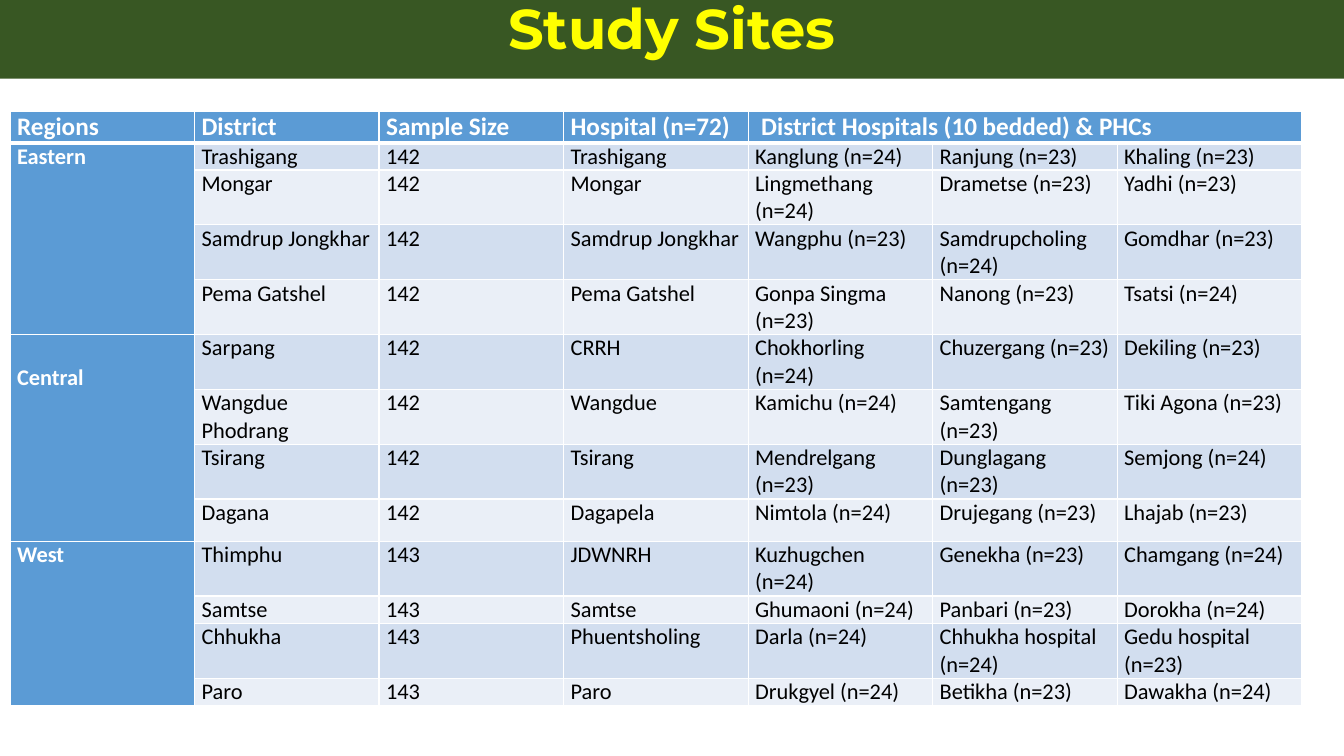
from lxml.etree import SubElement
from pptx import Presentation
from pptx.dml.color import RGBColor
from pptx.enum.shapes import MSO_SHAPE as Shape
from pptx.enum.text import MSO_ANCHOR as Anchor, PP_ALIGN as Align
from pptx.oxml.ns import qn
from pptx.util import Inches, Pt

HEADINGS = ["Regions", "District", "Sample Size", "Hospital (n=72)",
            "District Hospitals (10 bedded) & PHCs"]
REGIONS = {
    "Eastern": [
        ("Trashigang", "142", "Trashigang", "Kanglung (n=24)", "Ranjung (n=23)", "Khaling (n=23)"),
        ("Mongar", "142", "Mongar", "Lingmethang (n=24)", "Drametse (n=23)", "Yadhi (n=23)"),
        ("Samdrup Jongkhar", "142", "Samdrup Jongkhar", "Wangphu (n=23)",
         "Samdrupcholing (n=24)", "Gomdhar (n=23)"),
        ("Pema Gatshel", "142", "Pema Gatshel", "Gonpa Singma (n=23)", "Nanong (n=23)", "Tsatsi (n=24)"),
    ],
    "Central": [
        ("Sarpang", "142", "CRRH", "Chokhorling (n=24)", "Chuzergang (n=23)", "Dekiling (n=23)"),
        ("Wangdue Phodrang", "142", "Wangdue", "Kamichu (n=24)", "Samtengang (n=23)", "Tiki Agona (n=23)"),
        ("Tsirang", "142", "Tsirang", "Mendrelgang (n=23)", "Dunglagang (n=23)", "Semjong (n=24)"),
        ("Dagana", "142", "Dagapela", "Nimtola (n=24)", "Drujegang (n=23)", "Lhajab (n=23)"),
    ],
    "West": [
        ("Thimphu", "143", "JDWNRH", "Kuzhugchen (n=24)", "Genekha (n=23)", "Chamgang (n=24)"),
        ("Samtse", "143", "Samtse", "Ghumaoni (n=24)", "Panbari (n=23)", "Dorokha (n=24)"),
        ("Chhukha", "143", "Phuentsholing", "Darla (n=24)", "Chhukha hospital (n=24)",
         "Gedu hospital (n=23)"),
        ("Paro", "143", "Paro", "Drukgyel (n=24)", "Betikha (n=23)", "Dawakha (n=24)"),
    ],
}


def color(value):
    return RGBColor.from_string(value)


class SiteSlide:
    """Hold the style and the current slide, and draw its elements."""

    heading_fill = "5B9BD5"
    band_fills = ("D2DEEF", "EAEFF7")
    white = "FFFFFF"
    black = "000000"
    body_font = "Calibri"
    body_size = 16
    heading_size = 18

    def __init__(self, presentation):
        self.slide = presentation.slides.add_slide(presentation.slide_layouts[6])

    def label(self, frame, text, font, size, ink, bold):
        frame.text = text
        paragraph = frame.paragraphs[0]
        paragraph.font.name = font
        paragraph.font.size = Pt(size)
        paragraph.font.bold = bold
        paragraph.font.color.rgb = color(ink)
        return paragraph

    def banner(self, text):
        band = self.slide.shapes.add_shape(
            Shape.RECTANGLE, Inches(0), Inches(-0.11), Inches(13.33), Inches(0.89))
        band.shadow.inherit = False
        band.fill.solid()
        band.fill.fore_color.rgb = color("385723")
        band.line.fill.background()
        band.text_frame.vertical_anchor = Anchor.TOP
        title = self.label(band.text_frame, text, "Montserrat", 40, "FFFF00", True)
        title.alignment = Align.CENTER

    def borders(self, cell, top, bottom):
        properties = cell._tc.get_or_add_tcPr()
        for side, width in (("lnL", 1), ("lnR", 1), ("lnT", top), ("lnB", bottom)):
            edge = SubElement(properties, qn(f"a:{side}"), w=str(Pt(width)))
            SubElement(SubElement(edge, qn("a:solidFill")), qn("a:srgbClr"), val=self.white)

    def cell(self, cell, text, fill, size, ink, bold):
        cell.margin_left = cell.margin_right = Inches(0.07)
        cell.margin_top = cell.margin_bottom = Inches(0)
        cell.fill.solid()
        cell.fill.fore_color.rgb = color(fill)
        self.label(cell.text_frame, text, self.body_font, size, ink, bold)

    def sites(self, headings, regions):
        row_count = 1 + sum(len(districts) for districts in regions.values())
        table = self.slide.shapes.add_table(
            row_count, 7, Inches(0.1), Inches(1.11), Inches(12.81), Inches(3.54)).table
        for column in table.columns:
            column.width = Inches(1.83)
        for index, row in enumerate(table.rows):
            row.height = Inches({0: 0.22, 8: 0.42}.get(index, 0.26))
            for cell in row.cells:
                self.borders(cell, 3 if index == 1 else 1, 3 if index == 0 else 1)

        for index, heading in enumerate(headings):
            self.cell(table.cell(0, index), heading, self.heading_fill,
                      self.heading_size, self.white, True)
        table.cell(0, 4).merge(table.cell(0, 6))
        table.cell(0, 4).margin_left = Inches(0.13)

        first = 1
        for region, districts in regions.items():
            region_cell = table.cell(first, 0)
            region_cell.merge(table.cell(first + len(districts) - 1, 0))
            self.cell(region_cell, region, self.heading_fill, self.body_size, self.white, True)
            if region == "Central":
                region_cell.margin_top = Inches(0.29)
            for offset, district in enumerate(districts):
                for index, text in enumerate(district, 1):
                    self.cell(table.cell(first + offset, index), text,
                              self.band_fills[offset % 2], self.body_size, self.black, False)
            first += len(districts)


def main():
    presentation = Presentation()
    presentation.slide_width = Inches(13.33)
    presentation.slide_height = Inches(7.5)
    slide = SiteSlide(presentation)
    slide.banner("Study Sites")
    slide.sites(HEADINGS, REGIONS)
    presentation.save("out.pptx")


if __name__ == "__main__":
    main()
